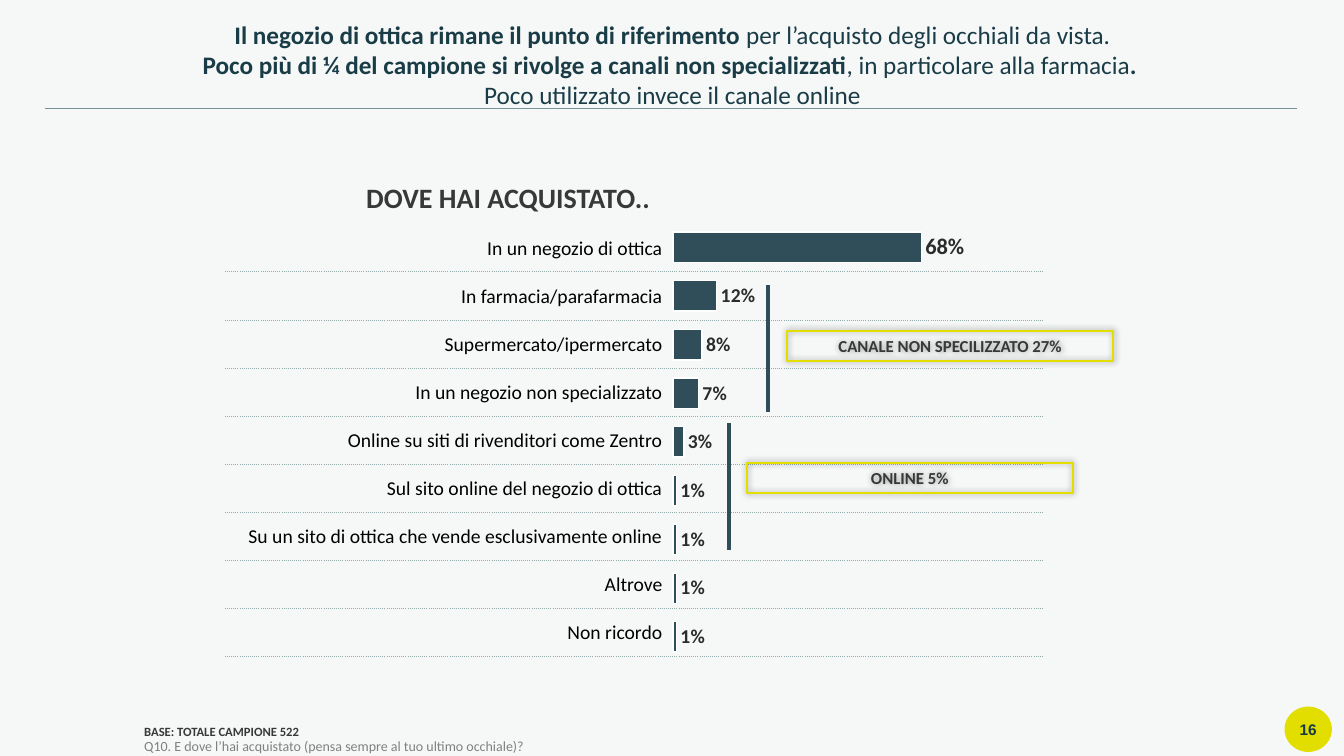
from lxml.etree import SubElement
from pptx import Presentation
from pptx.chart.data import CategoryChartData
from pptx.dml.color import RGBColor
from pptx.enum.chart import XL_CHART_TYPE, XL_LABEL_POSITION
from pptx.enum.shapes import MSO_CONNECTOR, MSO_SHAPE
from pptx.enum.text import MSO_ANCHOR, PP_ALIGN
from pptx.oxml import parse_xml
from pptx.oxml.ns import nsdecls, qn
from pptx.util import Inches, Pt

HUES = {
    "back": "F6F8F8", "title": "1A3C47", "bar": "304E59", "text": "383839",
    "note": "808080", "rule": "76929C", "dots": "95ACAC", "lime": "E2DE00",
    "page": "193B47", "label": "2B2B2B", "black": "000000", "white": "FFFFFF",
}
HUE = {name: RGBColor.from_string(code) for name, code in HUES.items()}


def write(para, text, size, hue, bold=False, face="Calibri"):
    run = para.add_run()
    run.text = text
    run.font.name, run.font.size, run.font.bold = face, Pt(size), bold
    run.font.color.rgb = HUE[hue]


def draw(x1, y1, x2, y2, hue, width):
    line = slide.shapes.add_connector(
        MSO_CONNECTOR.STRAIGHT, Inches(x1), Inches(y1), Inches(x2), Inches(y2))
    line.line.color.rgb, line.line.width = HUE[hue], Pt(width)
    SubElement(line._element.spPr, qn("a:effectLst"))


deck = Presentation()
deck.slide_width, deck.slide_height = Inches(13.33), Inches(7.5)
slide = deck.slides.add_slide(deck.slide_layouts[5])
slide.background.fill.solid()
slide.background.fill.fore_color.rgb = HUE["back"]

# Page number and header rule
disc = slide.shapes.add_shape(
    MSO_SHAPE.OVAL, Inches(12.74), Inches(7.01), Inches(0.47), Inches(0.45))
disc.shadow.inherit = False
disc.fill.solid()
disc.fill.fore_color.rgb = HUE["lime"]
disc.line.fill.background()
frame = disc.text_frame
frame.margin_left = frame.margin_right = frame.margin_top = frame.margin_bottom = 0
frame.vertical_anchor = MSO_ANCHOR.MIDDLE
frame.paragraphs[0].alignment = PP_ALIGN.CENTER
write(frame.paragraphs[0], "16", 11, "page", True, "Arial")
draw(0.45, 1.08, 12.86, 1.08, "rule", 0.5)

# Table of places, with dotted lines between rows
places = [
    ("In un negozio di ottica", 0.68),
    ("In farmacia/parafarmacia", 0.12),
    ("Supermercato/ipermercato", 0.08),
    ("In un negozio non specializzato", 0.07),
    ("Online su siti di rivenditori come Zentro", 0.03),
    ("Sul sito online del negozio di ottica", 0.01),
    ("Su un sito di ottica che vende esclusivamente online", 0.01),
    ("Altrove", 0.01),
    ("Non ricordo", 0.01),
]
table = slide.shapes.add_table(
    len(places), 2, Inches(2.23), Inches(2.22), Inches(8.11), Inches(4.29)).table
table.first_row = table.horz_banding = False
table.columns[0].width, table.columns[1].width = Inches(4.35), Inches(3.76)
dotted = (f'<a:solidFill><a:srgbClr val="{HUES["dots"]}"/></a:solidFill>'
          '<a:prstDash val="sysDot"/>')
for i, (place, share) in enumerate(places):
    table.rows[i].height = Inches(4.29 / len(places))
    for cell in table.rows[i].cells:
        cell.fill.background()
        cell.vertical_anchor = MSO_ANCHOR.MIDDLE
        cell.margin_left = cell.margin_right = cell.margin_top = Inches(0.01)
        cell.margin_bottom = 0
        props = cell._tc.get_or_add_tcPr()
        for spot, side in enumerate("LRTB"):
            ink = dotted if side == "B" or (side == "T" and i) else "<a:noFill/>"
            props.insert(spot, parse_xml(
                f'<a:ln{side} {nsdecls("a")} w="6350">{ink}</a:ln{side}>'))
    para = table.cell(i, 0).text_frame.paragraphs[0]
    para.alignment = PP_ALIGN.RIGHT
    write(para, place, 14, "black")

# Chart heading
box = slide.shapes.add_textbox(Inches(1.89), Inches(1.74), Inches(6.3), Inches(0.44))
box.text_frame.word_wrap = True
para = box.text_frame.paragraphs[0]
para.alignment = PP_ALIGN.CENTER
write(para, "DOVE HAI ACQUISTATO..", 20, "text", True)

# Base and question
box = slide.shapes.add_textbox(Inches(1.43), Inches(6.56), Inches(11.91), Inches(0.93))
frame = box.text_frame
frame.word_wrap = True
frame.margin_left = frame.margin_right = frame.margin_top = frame.margin_bottom = 0
frame.vertical_anchor = MSO_ANCHOR.BOTTOM
base, query = frame.paragraphs[0], frame.add_paragraph()
base.line_spacing = query.line_spacing = 0.95
write(base, "BASE: TOTALE CAMPIONE 522", 9, "text", True)
write(query, "Q10. E dove l’hai acquistato (pensa sempre al tuo ultimo occhiale)?",
      10, "note")

# Bar chart
data = CategoryChartData(number_format="0%")
data.categories = [str(i + 1) for i in range(len(places))]
data.add_series("Series 1", [share for place, share in places])
chart = slide.shapes.add_chart(
    XL_CHART_TYPE.BAR_CLUSTERED, Inches(6.43), Inches(2.13), Inches(4.51),
    Inches(4.52), data).chart
chart.has_legend = chart.has_title = False
chart.font.name, chart.font.size = "Calibri", Pt(9)
chart.font.color.rgb = HUE["label"]
chart.category_axis.reverse_order = True
chart.category_axis.visible = False
axis = chart.value_axis
axis.minimum_scale, axis.maximum_scale = 0, 0.9
axis.has_major_gridlines = axis.visible = False
plot = chart.plots[0]
plot.gap_width, plot.vary_by_categories = 60, False
bars = plot.series[0]
bars.format.fill.solid()
bars.format.fill.fore_color.rgb = HUE["bar"]
bars.format.line.color.rgb, bars.format.line.width = HUE["white"], Pt(1)
labels = bars.data_labels
labels.show_value = True
labels.number_format, labels.number_format_is_linked = "0%", False
first = bars.points[0].data_label
for label, size in ((labels, 14), (first, 16)):
    label.position = XL_LABEL_POSITION.OUTSIDE_END
    label.font.name, label.font.size, label.font.bold = "Calibri", Pt(size), True
    label.font.color.rgb = HUE["label"]

# Inner plot area as shares of the chart
area = chart._chartSpace.chart.plotArea
for old in area.findall(qn("c:layout")):
    area.remove(old)
spots = "".join(f'<c:{key} val="{val}"/>' for key, val in (
    ("layoutTarget", "inner"), ("xMode", "edge"), ("yMode", "edge"),
    ("x", 0.054), ("y", 0.018), ("w", 0.724), ("h", 0.962)))
area.insert(0, parse_xml(
    f'<c:layout {nsdecls("c")}><c:manualLayout>{spots}</c:manualLayout></c:layout>'))

# Title
title = slide.shapes.title
title.left, title.top = Inches(0.34), Inches(0.14)
title.width, title.height = Inches(12.66), Inches(1.01)
frame = title.text_frame
frame.word_wrap = True
frame.vertical_anchor = MSO_ANCHOR.TOP
lines = [
    [("Il negozio di ottica rimane il punto di riferimento ", True),
     ("per l’acquisto degli occhiali da vista.", False)],
    [("Poco più di ¼ del campione si rivolge a canali non specializzati", True),
     (", in particolare alla farmacia", False), (". ", True)],
    [("Poco utilizzato invece il canale online", False)],
]
for i, line in enumerate(lines):
    para = frame.add_paragraph() if i else frame.paragraphs[0]
    para.alignment = PP_ALIGN.CENTER
    para.space_before = Pt(0)
    for text, bold in line:
        write(para, text, 18, "title", bold)

# Group brackets and their totals
for x, y, left, top, text in (
        (7.62, 2.83, 7.81, 3.28, "CANALE NON SPECILIZZATO 27%"),
        (7.23, 4.2, 7.41, 4.59, "ONLINE 5%")):
    draw(x, y, x, y + 1.26, "bar", 3)
    total = slide.shapes.add_shape(
        MSO_SHAPE.RECTANGLE, Inches(left), Inches(top), Inches(3.23), Inches(0.3))
    total.fill.background()
    total.line.color.rgb, total.line.width = HUE["lime"], Pt(1.5)
    total._element.spPr.append(parse_xml(
        f'<a:effectLst {nsdecls("a")}><a:outerShdw blurRad="63500" dist="0">'
        f'<a:srgbClr val="{HUES["black"]}"><a:alpha val="40000"/></a:srgbClr>'
        '</a:outerShdw></a:effectLst>'))
    total.text_frame.vertical_anchor = MSO_ANCHOR.TOP
    para = total.text_frame.paragraphs[0]
    para.alignment = PP_ALIGN.CENTER
    write(para, text, 12, "text", True)

deck.save("out.pptx")
